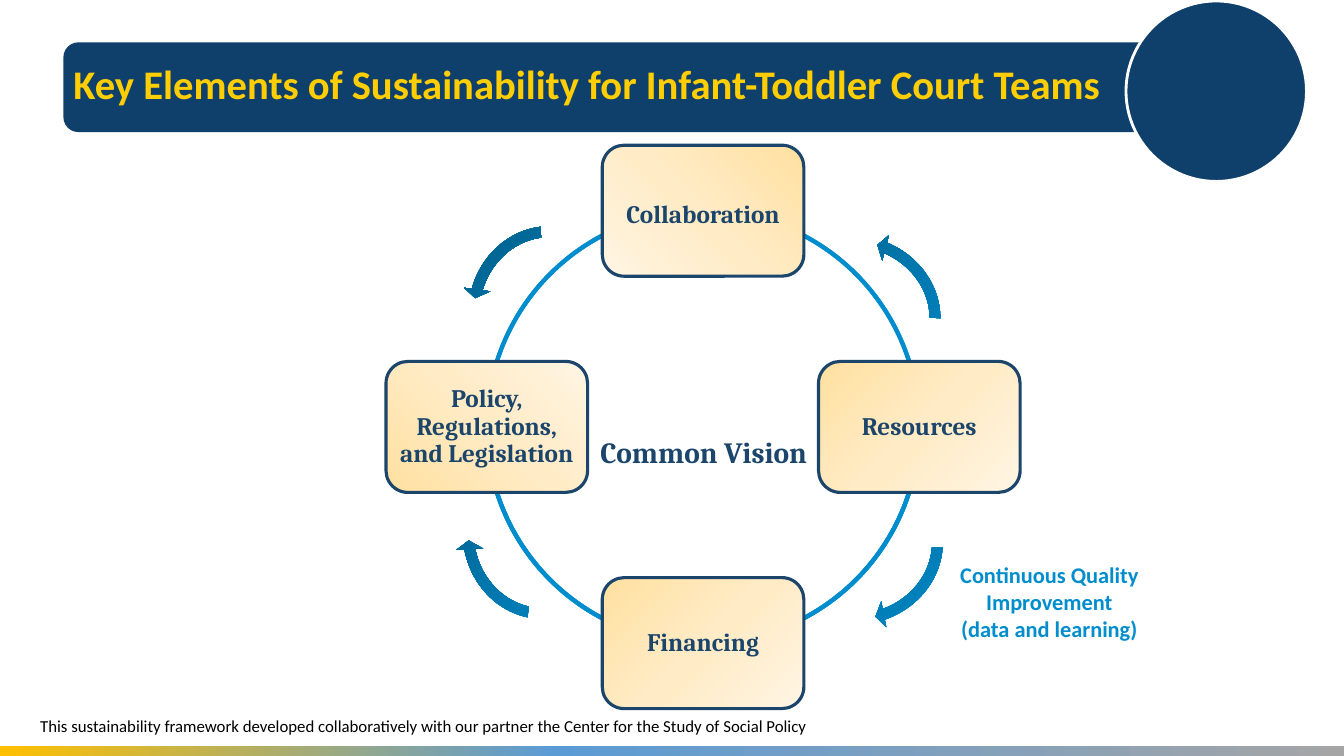
import dataclasses

import pptx
import pptx.dml.color
import pptx.enum.shapes
import pptx.enum.text
import pptx.oxml
import pptx.oxml.ns
import pptx.util

SHAPES = pptx.enum.shapes.MSO_SHAPE
ANCHOR = pptx.enum.text.MSO_ANCHOR
ALIGN = pptx.enum.text.PP_ALIGN
SLIDE_WIDTH = pptx.util.Inches(13.33)
SLIDE_HEIGHT = pptx.util.Inches(7.5)

RING_COL, RING_ROW = 52.31, 56.47
RING_COLS, RING_ROWS = 16.09, 28.6
ELEMENT_COLS, ELEMENT_ROWS = 15, 17.33
ARROW_COLS, ARROW_ROWS = 12.3, 23.73
ARROW_ADJUSTMENTS = (0.065, 4.3, 104.89, 148.38, 0.08)
DEGREE_ADJUSTMENT = 0.6


@dataclasses.dataclass(frozen=True)
class Theme:
    """Colours, fonts and type sizes of the slide."""

    navy: str = "0F406B"
    ink: str = "1B456B"
    blue: str = "008DCD"
    gold: str = "FFCE02"
    white: str = "FFFFFF"
    black: str = "000000"
    strip: tuple = ((0, "FFC000"), (41, "5B9BD5"), (100, "A5A5A5"))
    cream: tuple = ((0, "FFE0A0"), (50, "FFEBC5"), (100, "FFF5E3"))
    ocean: tuple = ((0, "005479"), (50, "0077AD"), (100, "008DCD"))
    sans: str = "Calibri"
    serif: str = "Cambria"
    title: int = 29
    vision: int = 21
    element: int = 18
    caption: int = 16
    footnote: int = 12


THEME = Theme()


def rgb(color):
    """Return a colour object for a hex value."""
    return pptx.dml.color.RGBColor.from_string(color)


def place(col, row, cols, rows):
    """Turn a cell span on a 100 by 100 grid into slide lengths."""
    return (round(SLIDE_WIDTH * col / 100), round(SLIDE_HEIGHT * row / 100),
            round(SLIDE_WIDTH * cols / 100), round(SLIDE_HEIGHT * rows / 100))


def centred(col, row, cols, rows):
    """Return the cell span of the given size around a centre."""
    return col - cols / 2, row - rows / 2, cols, rows


def fill_gradient(shape, stops, angle=0, focus=None):
    """Fill a shape with a linear gradient, or a circular one from a focus corner."""
    colours = "".join(f'<a:gs pos="{position * 1000}"><a:srgbClr val="{color}"/></a:gs>'
                      for position, color in stops)
    direction = f'<a:lin ang="{angle * 60000}" scaled="0"/>'
    if focus:
        edges = " ".join(f'{edge}="{share * 1000}"' for edge, share in zip("ltrb", focus))
        direction = f'<a:path path="circle"><a:fillToRect {edges}/></a:path>'
    gradient = pptx.oxml.parse_xml(
        f'<a:gradFill {pptx.oxml.ns.nsdecls("a")} rotWithShape="1">'
        f"<a:gsLst>{colours}</a:gsLst>{direction}</a:gradFill>")
    shape.element.spPr.find(pptx.oxml.ns.qn("a:prstGeom")).addnext(gradient)


def add_figure(slide, preset, span, fill=None, gradient=None, line=None, width=1,
               adjustments=()):
    """Add a preset shape with its fill, outline and adjustments."""
    figure = slide.shapes.add_shape(preset, *place(*span))
    figure.shadow.inherit = False
    for index, value in enumerate(adjustments):
        figure.adjustments[index] = value
    if gradient:
        fill_gradient(figure, **gradient)
    elif fill:
        figure.fill.solid()
        figure.fill.fore_color.rgb = rgb(fill)
    else:
        figure.fill.background()
    if line:
        figure.line.color.rgb = rgb(line)
        figure.line.width = pptx.util.Pt(width)
    else:
        figure.line.fill.background()
    return figure


def write(holder, text, size, color, font=THEME.sans, bold=True, align=ALIGN.CENTER,
          anchor=ANCHOR.MIDDLE, spacing=1.0, inset=(0.1, 0.05, 0.1, 0.05)):
    """Write formatted text into a shape or text box."""
    frame = holder.text_frame
    frame.word_wrap = True
    frame.vertical_anchor = anchor
    (frame.margin_left, frame.margin_top,
     frame.margin_right, frame.margin_bottom) = map(pptx.util.Inches, inset)
    frame.text = text
    for paragraph in frame.paragraphs:
        paragraph.alignment = align
        paragraph.line_spacing = spacing
        paragraph.font.size = pptx.util.Pt(size)
        paragraph.font.bold = bold
        paragraph.font.name = font
        paragraph.font.color.rgb = rgb(color)


def add_text(slide, span, text, **text_format):
    """Add a text box with formatted text."""
    write(slide.shapes.add_textbox(*place(*span)), text, **text_format)


def add_banner(slide):
    """Add the title bar with its round badge and the strip at the foot."""
    add_figure(slide, SHAPES.RECTANGLE, (0, 98.67, 100, 1.33),
               gradient={"stops": THEME.strip})
    add_figure(slide, SHAPES.ROUNDED_RECTANGLE, (4.72, 5.6, 83.4, 11.87), fill=THEME.navy)
    add_figure(slide, SHAPES.OVAL, (83.78, 0.13, 13.43, 23.87), fill=THEME.navy,
               line=THEME.white, width=2)
    add_text(slide, (4.72, 2.53, 81.98, 17.87),
             "Key Elements of Sustainability for Infant-Toddler Court Teams",
             size=THEME.title, color=THEME.gold, align=ALIGN.LEFT, spacing=0.9)


def add_ring_arc(slide, start, end):
    """Add the part of the ring between two clockwise angles."""
    add_figure(slide, SHAPES.ARC, centred(RING_COL, RING_ROW, 2 * RING_COLS, 2 * RING_ROWS),
               line=THEME.blue, width=3,
               adjustments=[(angle if angle <= 180 else angle - 360) * DEGREE_ADJUSTMENT
                            for angle in (start, end)])


def add_element(slide, label, across, down, top_inset=0.07, **direction):
    """Add a labelled box on the ring, placed by its offset in radii."""
    box = add_figure(slide, SHAPES.ROUNDED_RECTANGLE,
                     centred(RING_COL + across * RING_COLS, RING_ROW + down * RING_ROWS,
                             ELEMENT_COLS, ELEMENT_ROWS),
                     gradient={"stops": THEME.cream, **direction},
                     line=THEME.ink, width=2.25)
    write(box, label, size=THEME.element, color=THEME.ink, font=THEME.serif, spacing=0.9,
          inset=(0.07, top_inset, 0.07, 0.07))


def add_cycle_arrow(slide, col, row, rotation, flipped):
    """Add a curved arrow beside the ring."""
    arrow = add_figure(slide, SHAPES.LEFT_CIRCULAR_ARROW,
                       centred(col, row, ARROW_COLS, ARROW_ROWS),
                       gradient={"stops": THEME.ocean, "focus": (0, 0, 100, 100)},
                       adjustments=ARROW_ADJUSTMENTS)
    arrow.rotation = rotation
    if flipped:
        arrow.element.spPr.xfrm.set("flipH", "1")


def main():
    """Build the slide and save it."""
    deck = pptx.Presentation()
    deck.slide_width, deck.slide_height = SLIDE_WIDTH, SLIDE_HEIGHT
    slide = deck.slides.add_slide(deck.slide_layouts[6])
    add_banner(slide)

    for start, end in ((298.5, 342), (18, 61.5), (118.5, 162), (198, 241.5)):
        add_ring_arc(slide, start, end)
    add_element(slide, "Collaboration", 0, -1, top_inset=0.17, angle=135)
    add_element(slide, "Resources", 1, 0, angle=45)
    add_element(slide, "Financing", 0, 1, angle=45)
    add_element(slide, "Policy, Regulations, and Legislation", -1, 0,
                focus=(0, 100, 100, 0))

    add_text(slide, (66, 71.87, 24.15, 15.47),
             "Continuous Quality Improvement\v(data and learning)",
             size=THEME.caption, color=THEME.blue, inset=(0.4, 0.05, 0.4, 0.05))
    add_text(slide, (43.28, 54.27, 18.15, 10.93), "Common Vision",
             size=THEME.vision, color=THEME.ink, font=THEME.serif)
    for col, row, rotation, flipped in ((64.13, 72.53, 66.5, True),
                                        (63.98, 41.33, 116.9, False),
                                        (40.5, 40.67, 20.1, False),
                                        (40.05, 71.07, 165, True)):
        add_cycle_arrow(slide, col, row, rotation, flipped)
    add_text(slide, (2.25, 94, 92.48, 4),
             "This sustainability framework developed collaboratively with our partner "
             "the Center for the Study of Social Policy",
             size=THEME.footnote, color=THEME.black, bold=False, align=ALIGN.LEFT,
             anchor=ANCHOR.TOP)
    deck.save("out.pptx")


if __name__ == "__main__":
    main()
